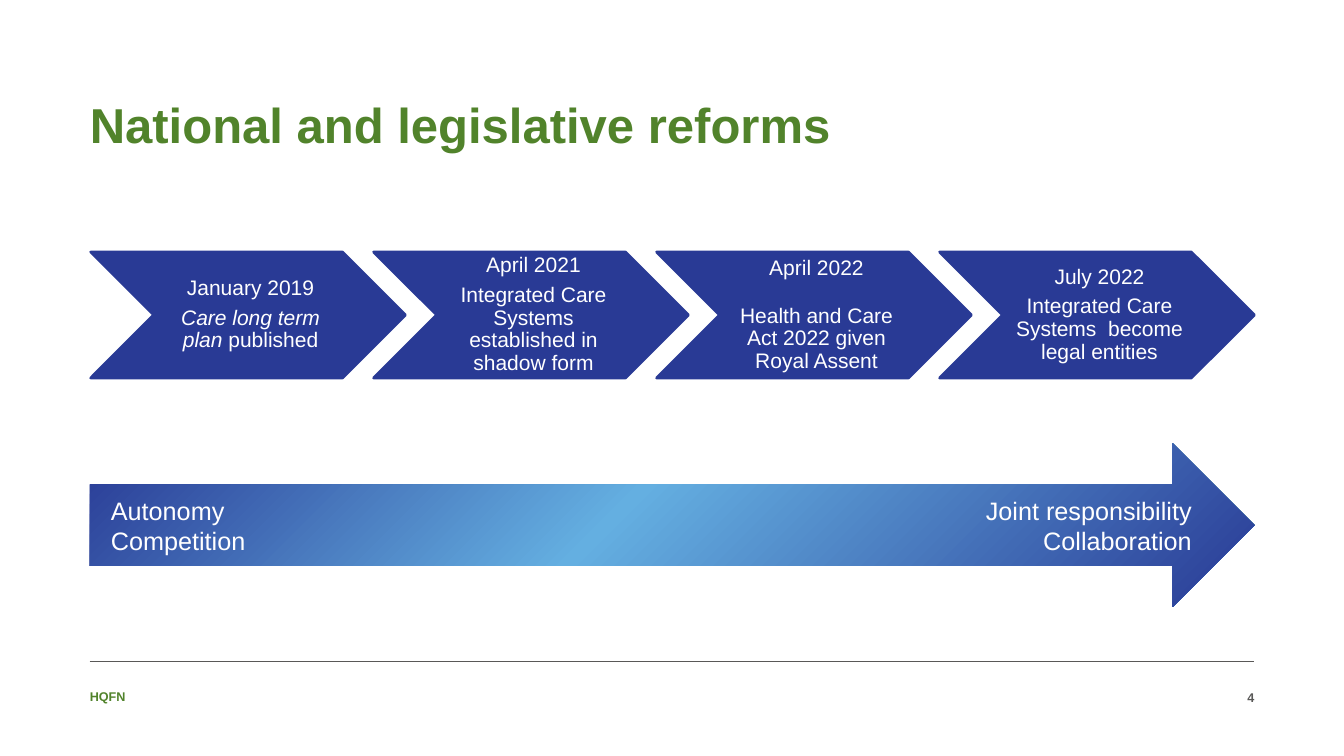
from copy import deepcopy
from dataclasses import dataclass

from lxml import etree
from pptx import Presentation
from pptx.dml.color import RGBColor
from pptx.enum.shapes import MSO_CONNECTOR, MSO_SHAPE
from pptx.enum.text import MSO_ANCHOR, MSO_AUTO_SIZE, PP_ALIGN
from pptx.oxml.ns import qn
from pptx.util import Inches, Pt

STRAIGHT = MSO_CONNECTOR.STRAIGHT
CHEVRON, RIGHT_ARROW = MSO_SHAPE.CHEVRON, MSO_SHAPE.RIGHT_ARROW
LEFT, CENTER, RIGHT = PP_ALIGN.LEFT, PP_ALIGN.CENTER, PP_ALIGN.RIGHT
MIDDLE, BOTTOM = MSO_ANCHOR.MIDDLE, MSO_ANCHOR.BOTTOM
TITLE_ONLY = 5


@dataclass(frozen=True)
class Theme:
    font: str = "Arial"
    green: RGBColor = RGBColor(0x51, 0x83, 0x2B)
    grey: RGBColor = RGBColor(0x59, 0x58, 0x57)
    navy: RGBColor = RGBColor(0x29, 0x3A, 0x95)
    sky: RGBColor = RGBColor(0x64, 0xAF, 0xE1)
    white: RGBColor = RGBColor(0xFF, 0xFF, 0xFF)
    title_size: Pt = Pt(35)
    arrow_size: Pt = Pt(18)
    step_size: Pt = Pt(15)
    footer_size: Pt = Pt(9)


THEME = Theme()
MARGIN, CONTENT_WIDTH = 0.89, 11.55
STEP_LEFT, STEP_WIDTH = 0.9, 3.12
STEP_COUNT = 4
STEP_PITCH = (MARGIN + CONTENT_WIDTH - STEP_LEFT - STEP_WIDTH) / (STEP_COUNT - 1)

# Date, gap below it in points, and description as (text, italic) runs
STEPS = [
    ("January 2019", 5, [("Care long term plan ", True), ("published", False)]),
    ("April 2021", 5, [("Integrated Care Systems established in shadow form", False)]),
    ("April 2022", 18, [("Health and Care Act 2022 given Royal Assent", False)]),
    ("July 2022", 5, [("Integrated Care Systems  become legal entities", False)]),
]
SHIFTS = [("Autonomy", "Joint responsibility"), ("Competition", "Collaboration")]


def set_frame(frame, anchor, insets=(0, 0, 0, 0)):
    frame.word_wrap = True
    frame.auto_size = MSO_AUTO_SIZE.NONE
    frame.vertical_anchor = anchor
    frame.margin_left, frame.margin_top, frame.margin_right, frame.margin_bottom = map(
        Inches, insets)


def style_paragraph(paragraph, size, color, align=LEFT, bold=False):
    paragraph.alignment = align
    for run in paragraph.runs:
        run.font.name = THEME.font
        run.font.size = size
        run.font.bold = bold
        run.font.color.rgb = color


def place_title(slide, text):
    title = slide.shapes.title
    title.left, title.top = Inches(MARGIN), Inches(0.93)
    title.width, title.height = Inches(CONTENT_WIDTH), Inches(0.59)
    set_frame(title.text_frame, BOTTOM)
    title.text_frame.text = text
    style_paragraph(title.text_frame.paragraphs[0], THEME.title_size, THEME.green, bold=True)


def add_label(slide, text, left, top, width, height, color, align):
    label = slide.shapes.add_textbox(*map(Inches, (left, top, width, height)))
    set_frame(label.text_frame, MIDDLE)
    label.text_frame.text = text
    style_paragraph(label.text_frame.paragraphs[0], THEME.footer_size, color, align, bold=True)


def add_footer_rule(slide):
    rule = slide.shapes.add_connector(
        STRAIGHT, Inches(MARGIN), Inches(6.56), Inches(MARGIN + CONTENT_WIDTH), Inches(6.56))
    rule.line.color.rgb = THEME.grey
    rule.line.width = Pt(0.25)
    etree.SubElement(rule._element.spPr, qn("a:effectLst"))


def add_step(slide, left, date, gap, description):
    step = slide.shapes.add_shape(
        CHEVRON, Inches(left), Inches(2.5), Inches(STEP_WIDTH), Inches(1.25))
    step.shadow.inherit = False
    step.fill.solid()
    step.fill.fore_color.rgb = THEME.navy
    step.line.color.rgb = THEME.navy
    step.line.width = Pt(2)
    etree.SubElement(step.line._get_or_add_ln(), qn("a:round"))

    frame = step.text_frame
    set_frame(frame, MIDDLE, (0.07, 0.02, 0.02, 0.02))
    frame.text = date
    heading = frame.paragraphs[0]
    heading.space_after = Pt(gap)
    detail = frame.add_paragraph()
    for text, italic in description:
        run = detail.add_run()
        run.text = text
        run.font.italic = italic
    for paragraph in (heading, detail):
        paragraph.line_spacing = 0.9
        style_paragraph(paragraph, THEME.step_size, THEME.white, CENTER)


def fill_with_gradient(shape):
    """Diagonal blend from navy through sky and back to navy."""
    shape.fill.gradient()
    shape.fill.gradient_angle = 315
    stop_list = shape._element.spPr.find(".//" + qn("a:gsLst"))
    stop_list.insert(1, deepcopy(stop_list[0]))
    blend = ((0, THEME.navy), (0.45, THEME.sky), (1, THEME.navy))
    for stop, (position, color) in zip(shape.fill.gradient_stops, blend):
        stop.position = position
        stop.color.rgb = color


def add_right_tab(paragraph, position):
    tabs = etree.SubElement(paragraph._p.get_or_add_pPr(), qn("a:tabLst"))
    etree.SubElement(tabs, qn("a:tab"), pos=str(Inches(position)), algn="r")


def add_shift_arrow(slide):
    arrow = slide.shapes.add_shape(
        RIGHT_ARROW, Inches(MARGIN), Inches(4.4), Inches(CONTENT_WIDTH), Inches(1.62))
    arrow.shadow.inherit = False
    arrow.line.fill.background()
    fill_with_gradient(arrow)
    frame = arrow.text_frame
    set_frame(frame, MIDDLE, (0.21, 0.05, 0.1, 0.05))
    frame.text = "\n".join(f"{before}\t{after}" for before, after in SHIFTS)
    for paragraph in frame.paragraphs:
        style_paragraph(paragraph, THEME.arrow_size, THEME.white)
        add_right_tab(paragraph, 10.72)


def main():
    deck = Presentation()
    deck.slide_width, deck.slide_height = Inches(13.33), Inches(7.5)
    slide = deck.slides.add_slide(deck.slide_layouts[TITLE_ONLY])

    place_title(slide, "National and legislative reforms")

    # Timeline of reforms
    for index, step in enumerate(STEPS):
        add_step(slide, STEP_LEFT + index * STEP_PITCH, *step)

    # Shift in how organisations work
    add_shift_arrow(slide)

    # Footer
    add_footer_rule(slide)
    add_label(slide, "HQFN", MARGIN, 6.75, 3.15, 0.31, THEME.green, LEFT)
    add_label(slide, "4", 11.92, 6.84, 0.52, 0.15, THEME.grey, RIGHT)

    deck.save("out.pptx")


if __name__ == "__main__":
    main()
